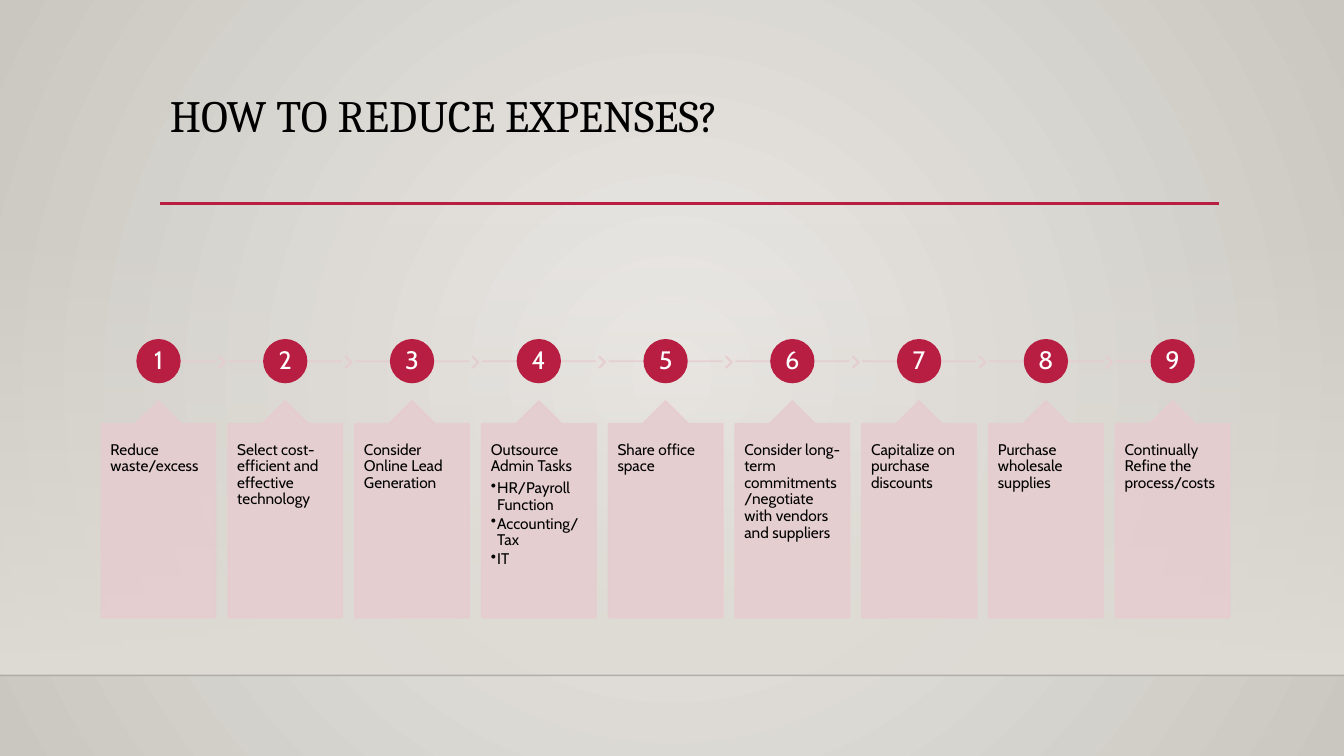
from dataclasses import dataclass

from lxml.etree import SubElement
from pptx import Presentation
from pptx.dml.color import RGBColor
from pptx.enum.shapes import MSO_CONNECTOR as Connector, MSO_SHAPE as Preset
from pptx.enum.text import MSO_ANCHOR as Anchor, PP_ALIGN as Align
from pptx.oxml import parse_xml
from pptx.oxml.ns import nsdecls, qn
from pptx.util import Pt


@dataclass(frozen=True)
class Theme:
    accent: str = "B71E42"
    blush: str = "E6CDCF"
    ink: str = "000000"
    white: str = "FFFFFF"
    center: str = "ECEAE7"
    rim: str = "CAC7C1"
    wall: str = "DFDBD5"
    heading_font: str = "Cambria"
    body_font: str = "Cabin"
    heading_size: float = 32
    number_size: float = 18
    body_size: float = 11
    outline: float = 1.25
    blush_alpha: int = 90


def set_alpha(parent, percent):
    for color in parent.iter(qn("a:srgbClr")):
        SubElement(color, qn("a:alpha"), val=str(percent * 1000))


def replace_with_gradient(solid, stops, direction):
    """Swap a solid fill element for a gradient of (position, color, alpha) stops."""
    stop_xml = "".join(
        f'<a:gs pos="{position * 1000}"><a:srgbClr val="{color}">'
        f'<a:alpha val="{alpha * 1000}"/></a:srgbClr></a:gs>'
        for position, color, alpha in stops)
    gradient = parse_xml(f'<a:gradFill {nsdecls("a")} rotWithShape="1">'
                         f"<a:gsLst>{stop_xml}</a:gsLst>{direction}</a:gradFill>")
    solid.getparent().replace(solid, gradient)


def write_text(frame, text, *, size, color, font, align=Align.LEFT,
               after=0, bullet=False, first=True):
    paragraph = frame.paragraphs[0] if first else frame.add_paragraph()
    if bullet:
        properties = paragraph._p.get_or_add_pPr()
        indent = int(Pt(4.5))
        properties.set("marL", str(indent))
        properties.set("indent", str(-indent))
        SubElement(properties, qn("a:buChar"), char="•")
        paragraph.level = 1
    paragraph.alignment = align
    paragraph.line_spacing = 0.9
    paragraph.space_after = Pt(after)
    run = paragraph.add_run()
    run.text = text
    run.font.size = Pt(size)
    run.font.name = font
    run.font.color.rgb = RGBColor.from_string(color)


class SlideBuilder:
    def __init__(self, slide, theme):
        self.slide = slide
        self.theme = theme

    def background(self):
        self.slide.background.fill.solid()
        self.slide.background.fill.fore_color.rgb = RGBColor.from_string(self.theme.rim)
        solid = self.slide.element.xpath("./p:cSld/p:bg/p:bgPr/a:solidFill")[0]
        replace_with_gradient(
            solid, [(0, self.theme.center, 100), (100, self.theme.rim, 100)],
            '<a:path path="circle">'
            '<a:fillToRect l="50000" t="50000" r="50000" b="50000"/></a:path>')

    def shape(self, preset, left, top, width, height, color, alpha=100,
              outlined=True, adjustments=()):
        shape = self.slide.shapes.add_shape(
            preset, Pt(left), Pt(top), Pt(width), Pt(height))
        shape.shadow.inherit = False
        for index, value in enumerate(adjustments):
            shape.adjustments[index] = value
        shape.fill.solid()
        shape.fill.fore_color.rgb = RGBColor.from_string(color)
        if outlined:
            shape.line.color.rgb = RGBColor.from_string(color)
            shape.line.width = Pt(self.theme.outline)
        else:
            shape.line.fill.background()
        if alpha < 100:
            set_alpha(shape.element.spPr, alpha)
        return shape

    def wall(self, top, height):
        panel = self.shape(Preset.RECTANGLE, 0, top, 960, height,
                           self.theme.wall, outlined=False)
        replace_with_gradient(
            panel.element.spPr.find(qn("a:solidFill")),
            [(0, self.theme.wall, 0), (100, self.theme.wall, 100)],
            '<a:lin ang="5400000" scaled="0"/>')

    def rule(self, left, right, y, color, weight, alpha=100):
        rule = self.slide.shapes.add_connector(
            Connector.STRAIGHT, Pt(left), Pt(y), Pt(right), Pt(y))
        rule.line.color.rgb = RGBColor.from_string(color)
        rule.line.width = Pt(weight)
        properties = rule._element.spPr
        SubElement(properties, qn("a:effectLst"))
        if alpha < 100:
            set_alpha(properties, alpha)

    def frame(self, holder, inset_x, inset_y, anchor=Anchor.TOP):
        frame = holder.text_frame
        frame.word_wrap = True
        frame.vertical_anchor = anchor
        frame.margin_left = frame.margin_right = Pt(inset_x)
        frame.margin_top = frame.margin_bottom = Pt(inset_y)
        return frame

    def heading(self, text, left, top, width, height):
        box = self.slide.shapes.add_textbox(Pt(left), Pt(top), Pt(width), Pt(height))
        write_text(self.frame(box, 7.2, 3.6), text, size=self.theme.heading_size,
                   color=self.theme.ink, font=self.theme.heading_font)

    def badge(self, number, center_x, center_y, diameter):
        circle = self.shape(Preset.OVAL, center_x - diameter / 2,
                            center_y - diameter / 2, diameter, diameter,
                            self.theme.accent)
        write_text(self.frame(circle, 1.2, 1.2, Anchor.MIDDLE), str(number),
                   size=self.theme.number_size, color=self.theme.white,
                   font=self.theme.body_font, align=Align.CENTER)

    def card(self, lead, details, left, top, width, height):
        callout = self.shape(Preset.UP_ARROW_CALLOUT, left, top, width, height,
                             self.theme.blush, self.theme.blush_alpha,
                             adjustments=(0.5, 0.2, 0.2, 1))
        frame = self.frame(callout, 6.42, 12.8)
        style = dict(size=self.theme.body_size, color=self.theme.ink,
                     font=self.theme.body_font)
        write_text(frame, lead, after=3.85, **style)
        for detail in details:
            write_text(frame, detail, after=1.65, bullet=True, first=False, **style)


STEPS = [
    ("Reduce waste/excess", []),
    ("Select cost-efficient and effective technology", []),
    ("Consider Online Lead Generation", []),
    ("Outsource Admin Tasks", ["HR/Payroll Function", "Accounting/Tax", "IT"]),
    ("Share office space", []),
    ("Consider long-term commitments/negotiate with vendors and suppliers", []),
    ("Capitalize on purchase discounts", []),
    ("Purchase wholesale supplies", []),
    ("Continually Refine the process/costs", []),
]
FIRST_LEFT, PITCH, CARD_WIDTH, TRACK_Y = 72.5, 90.55, 81.5, 258


def main():
    deck = Presentation()
    deck.slide_width, deck.slide_height = Pt(960), Pt(540)
    theme = Theme()
    builder = SlideBuilder(deck.slides.add_slide(deck.slide_layouts[6]), theme)

    # Backdrop and heading
    builder.background()
    builder.wall(159, 323.4)
    builder.rule(0, 960, 482.4, theme.ink, 1, alpha=20)
    builder.rule(114.3, 871, 145.3, theme.accent, 2.5)
    builder.heading("HOW TO REDUCE EXPENSES?", 114.3, 63.4, 756, 82.8)

    # Numbered steps along the track
    for number, (lead, details) in enumerate(STEPS, start=1):
        left = FIRST_LEFT + (number - 1) * PITCH
        center = left + CARD_WIDTH / 2
        is_last = number == len(STEPS)
        track_start = center if number == 1 else left
        track_end = center if is_last else left + CARD_WIDTH
        builder.rule(track_start, track_end, TRACK_Y, theme.blush,
                     theme.outline, theme.blush_alpha)
        if not is_last:
            builder.shape(Preset.CHEVRON, left + 83.8, TRACK_Y - 3.2, 4.4, 7.8,
                          theme.blush, theme.blush_alpha, adjustments=(0.9,))
        builder.badge(number, center, TRACK_Y, 30.4)
        builder.card(lead, details, left, 286.4, CARD_WIDTH, 154.6)

    deck.save("out.pptx")


if __name__ == "__main__":
    main()
